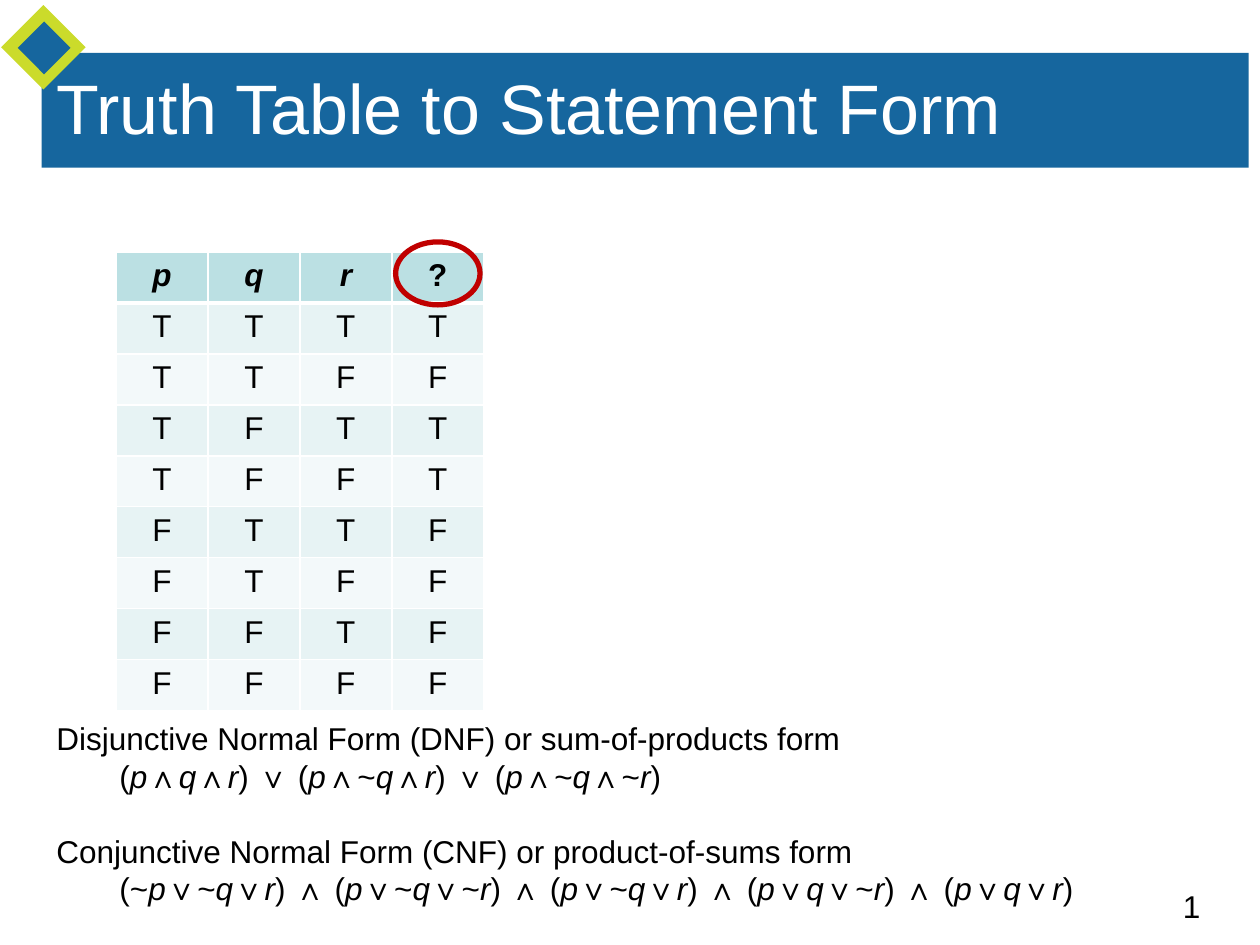
import itertools

import lxml.etree
import pptx
import pptx.dml.color
import pptx.enum.shapes
import pptx.enum.text
import pptx.oxml.ns
import pptx.util

Inches = pptx.util.Inches
Shape = pptx.enum.shapes.MSO_SHAPE
Align = pptx.enum.text.PP_ALIGN

COLORS = {
    "band": "16669E",
    "lime": "CBDB2B",
    "ring": "C00000",
    "header": "BBE0E3",
    "odd_row": "E7F3F4",
    "even_row": "F3F9FA",
    "text": "000000",
    "white": "FFFFFF",
}


def rgb(name):
    return pptx.dml.color.RGBColor.from_string(COLORS[name])


def write_text(paragraph, text, size=18, color="text", bold=False, formula=False, align=None):
    """Write text; in a formula, variables are italic and ∨ is set in Times New Roman."""
    paragraph.alignment = align

    def char_style(char):
        return formula and char in "pqr", formula and char == "∨"

    for (variable, disjunction), chars in itertools.groupby(text, char_style):
        run = paragraph.add_run()
        run.text = "".join(chars)
        run.font.name = "Times New Roman" if disjunction else "Arial"
        run.font.size = pptx.util.Pt(size)
        run.font.color.rgb = rgb(color)
        run.font.bold = bold
        run.font.italic = variable


class SlideBuilder:
    def __init__(self, slide):
        self.slide = slide

    def shape(self, kind, left, top, width, height, fill=None, line=None):
        shape = self.slide.shapes.add_shape(
            kind, Inches(left), Inches(top), Inches(width), Inches(height))
        shape.shadow.inherit = False
        if fill:
            shape.fill.solid()
            shape.fill.fore_color.rgb = rgb(fill)
        else:
            shape.fill.background()
        if line:
            shape.line.color.rgb = rgb(line)
            shape.line.width = pptx.util.Pt(3)
        else:
            shape.line.fill.background()

    def text_box(self, left, top, width, height, anchor=pptx.enum.text.MSO_ANCHOR.TOP):
        box = self.slide.shapes.add_textbox(
            Inches(left), Inches(top), Inches(width), Inches(height))
        box.text_frame.word_wrap = True
        box.text_frame.vertical_anchor = anchor
        return box.text_frame

    def cell_borders(self, cell, widths):
        properties = cell._tc.get_or_add_tcPr()
        for index, (side, width) in enumerate(widths.items()):
            border = lxml.etree.Element(
                pptx.oxml.ns.qn(f"a:{side}"), w=str(pptx.util.Pt(width)))
            fill = lxml.etree.SubElement(border, pptx.oxml.ns.qn("a:solidFill"))
            lxml.etree.SubElement(fill, pptx.oxml.ns.qn("a:srgbClr"), val=COLORS["white"])
            properties.insert(index, border)

    def table(self, rows, left, top, width, height):
        table = self.slide.shapes.add_table(
            len(rows), len(rows[0]),
            Inches(left), Inches(top), Inches(width), Inches(height)).table
        for row_index, row in enumerate(rows):
            is_header = row_index == 0
            fill = "header" if is_header else ("even_row", "odd_row")[row_index % 2]
            for column_index, value in enumerate(row):
                cell = table.cell(row_index, column_index)
                cell.fill.solid()
                cell.fill.fore_color.rgb = rgb(fill)
                self.cell_borders(cell, {
                    "lnL": 1, "lnR": 1,
                    "lnT": 3 if row_index == 1 else 1,
                    "lnB": 3 if is_header else 1})
                write_text(cell.text_frame.paragraphs[0], value,
                           bold=is_header, formula=is_header, align=Align.CENTER)


def main():
    deck = pptx.Presentation()
    deck.slide_width, deck.slide_height = Inches(10), Inches(7.5)
    builder = SlideBuilder(deck.slides.add_slide(deck.slide_layouts[6]))

    # Page number
    page_number = builder.text_box(9.29, 6.99, 0.71, 0.4)
    write_text(page_number.paragraphs[0], "1")

    # Title band with its diamond ornament
    builder.shape(Shape.RECTANGLE, 0.33, 0.42, 9.58, 0.91, fill="band")
    builder.shape(Shape.DIAMOND, 0.01, 0.04, 0.67, 0.67, fill="lime")
    builder.shape(Shape.DIAMOND, 0.14, 0.17, 0.42, 0.42, fill="band")
    title = builder.text_box(0.35, 0.22, 9, 1.25, pptx.enum.text.MSO_ANCHOR.MIDDLE)
    write_text(title.paragraphs[0], "Truth Table to Statement Form", size=40, color="white")

    # Truth table: every combination of p, q, r with its outcome
    outcomes = "TFTTFFFF"
    inputs = itertools.product("TF", repeat=3)
    rows = ["pqr?"] + ["".join(values) + outcome for values, outcome in zip(inputs, outcomes)]
    builder.table(rows, 0.92, 2, 2.92, 3.64)

    # Normal forms
    normal_forms = [
        ("Disjunctive Normal Form (DNF) or sum-of-products form",
         "\t(p∧q∧r) ∨ (p∧~q∧r) ∨ (p∧~q∧~r)"),
        ("Conjunctive Normal Form (CNF) or product-of-sums form",
         "\t(~p∨~q∨r) ∧ (p∨~q∨~r) ∧ (p∨~q∨r) ∧ (p∨q∨~r) ∧ (p∨q∨r)"),
    ]
    forms_text = builder.text_box(0.35, 5.66, 8.57, 1.92)
    for index, (heading, formula) in enumerate(normal_forms):
        if index == 0:
            heading_line = forms_text.paragraphs[0]
        else:
            heading_line = forms_text.add_paragraph()
            heading_line.space_before = pptx.util.Pt(21)
        write_text(heading_line, heading)
        write_text(forms_text.add_paragraph(), formula, formula=True)

    # Ring around the unknown column's heading
    builder.shape(Shape.OVAL, 3.14, 1.92, 0.67, 0.5, line="ring")

    deck.save("out.pptx")


if __name__ == "__main__":
    main()
